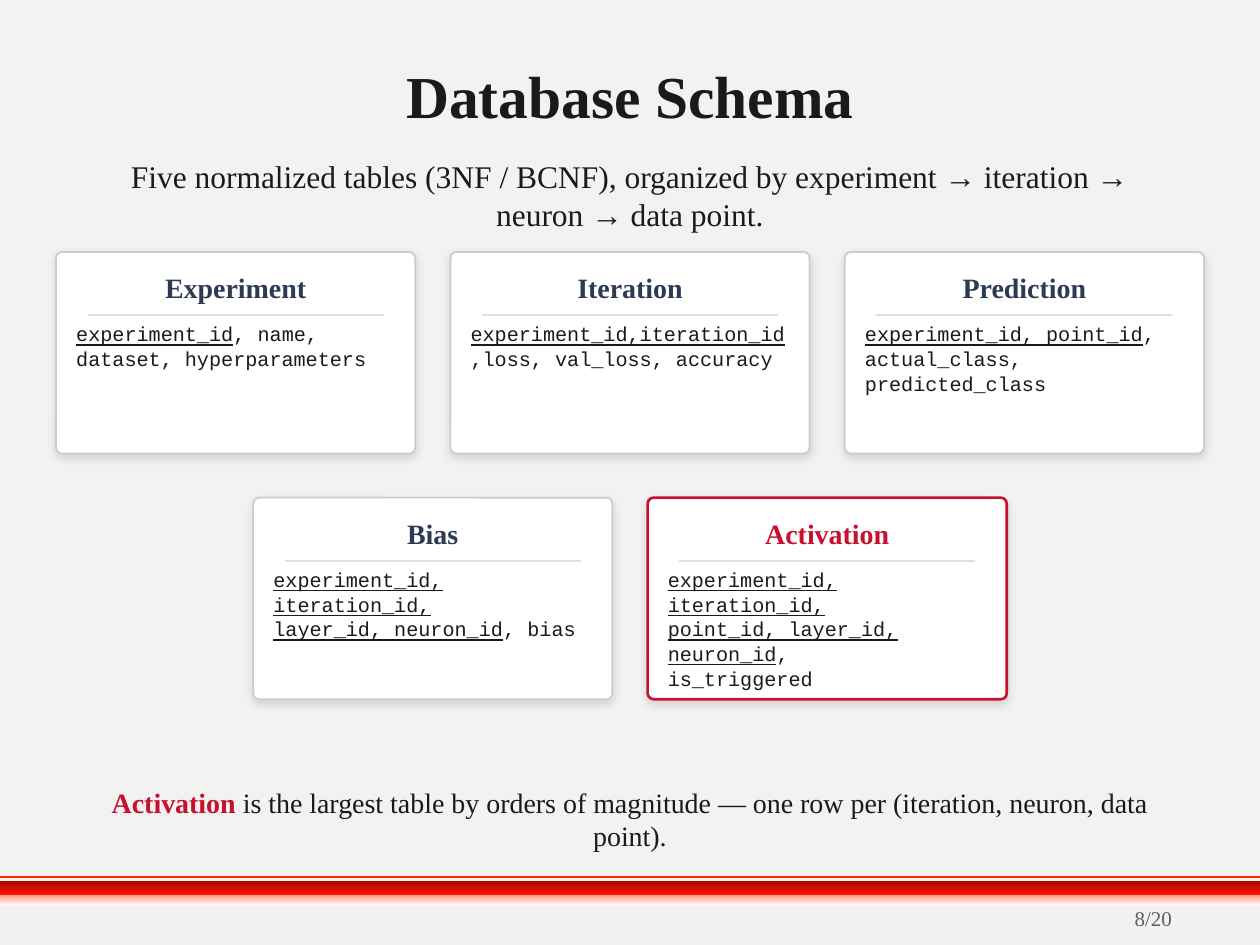
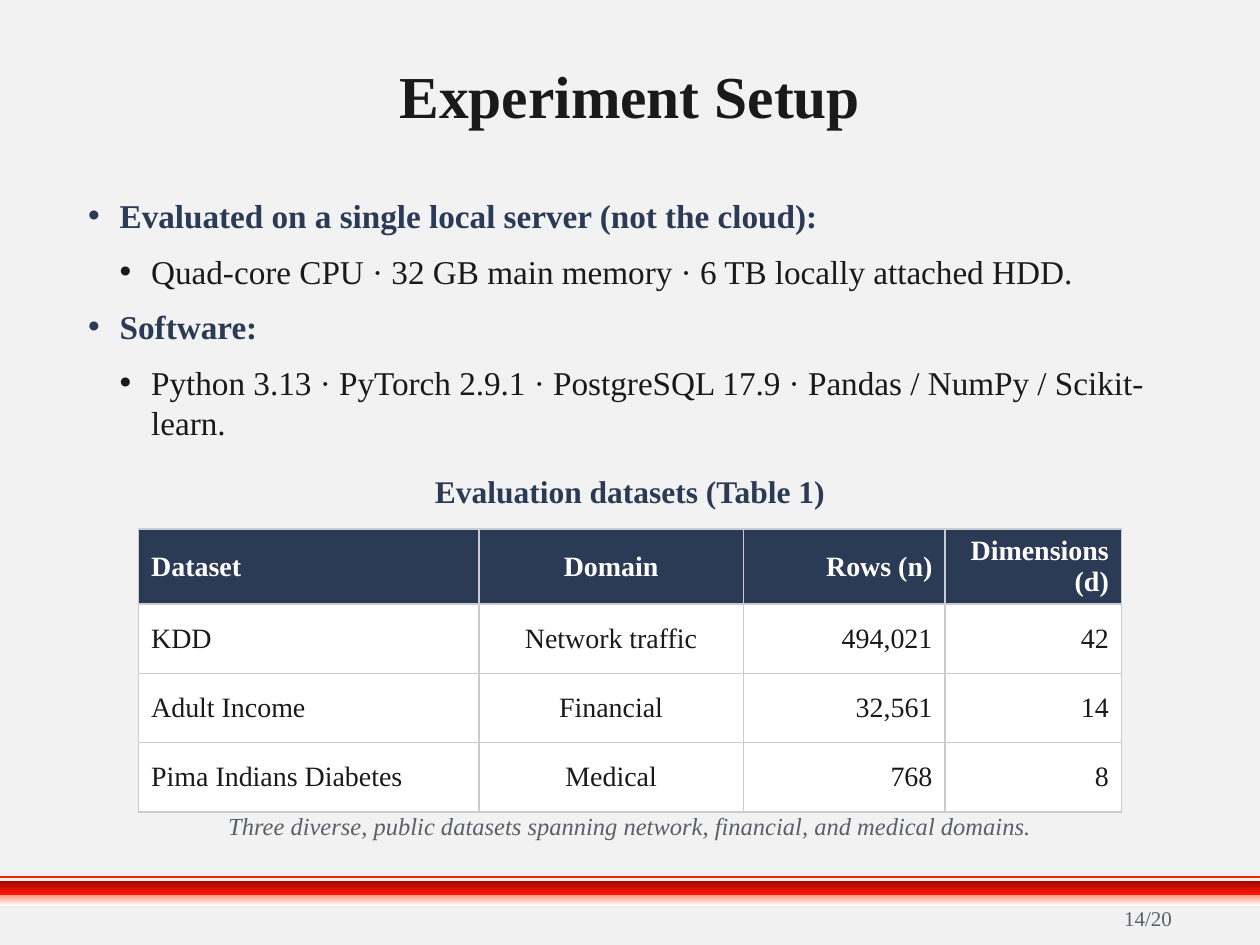
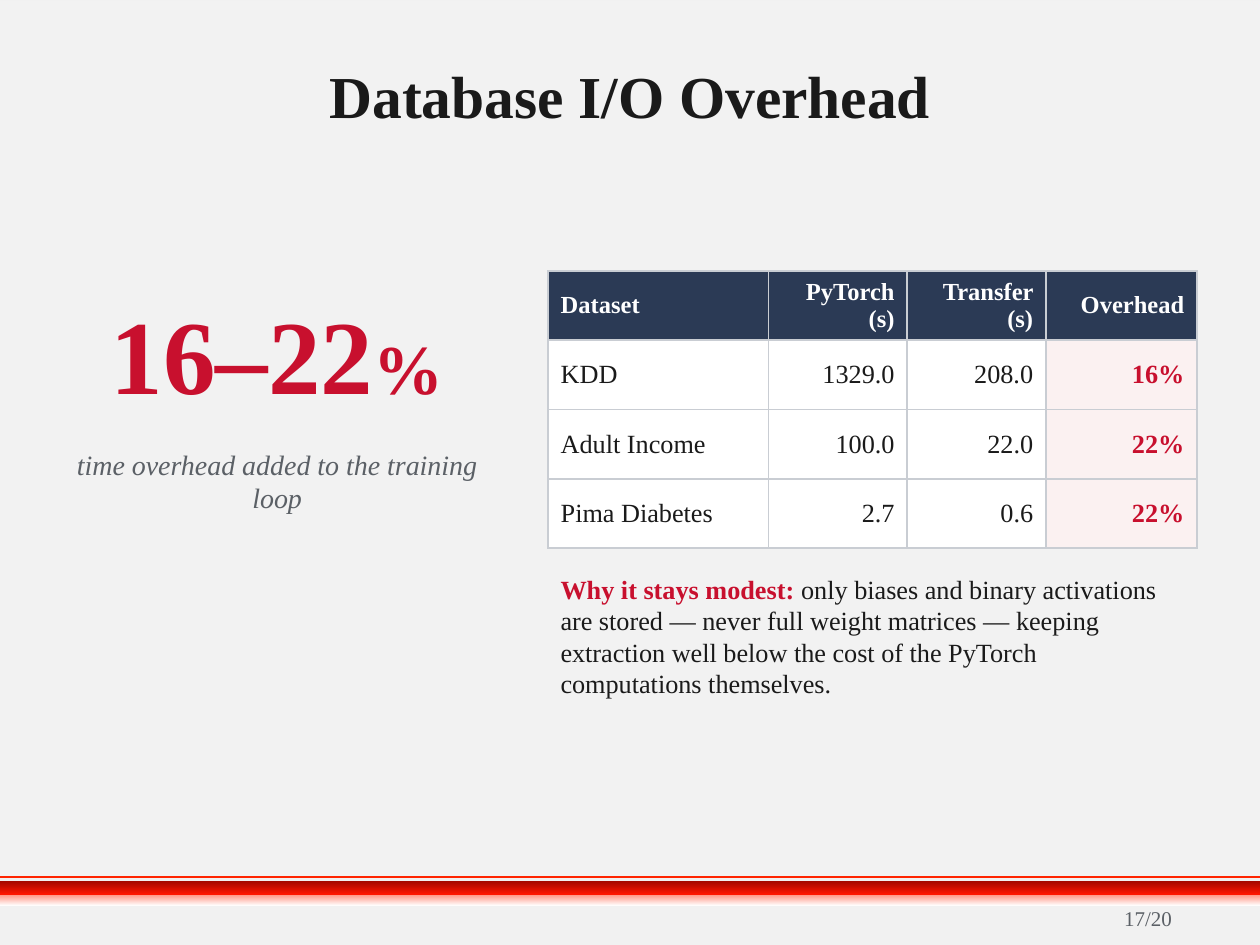
from lxml.etree import SubElement
from pptx import Presentation
from pptx.dml.color import RGBColor
from pptx.enum.shapes import MSO_CONNECTOR, MSO_SHAPE
from pptx.enum.text import MSO_ANCHOR as ANCHOR, MSO_AUTO_SIZE, PP_ALIGN as ALIGN
from pptx.oxml.ns import qn
from pptx.util import Inches, Pt

PAGE_WIDTH, PAGE_HEIGHT, PAGE_COUNT = 10, 7.5, 20
SERIF, MONO = "Times New Roman", "Courier New"
INK = RGBColor(0x1A, 0x1A, 0x1A)
NAVY = RGBColor(0x2B, 0x3A, 0x55)
CRIMSON = RGBColor(0xC8, 0x10, 0x2E)
SLATE = RGBColor(0x5B, 0x60, 0x66)
WHITE = RGBColor(0xFF, 0xFF, 0xFF)
BLUSH = RGBColor(0xFB, 0xF1, 0xF1)
GRID = RGBColor(0xC9, 0xCD, 0xD3)
RULE = RGBColor(0xDD, 0xE0, 0xE4)
PAPER = RGBColor(0xF1, 0xF1, 0xF1)
PANEL = RGBColor(0xF2, 0xF2, 0xF2)
SCARLET = RGBColor(0xFF, 0x24, 0x00)
DARK_RED = RGBColor(0xA0, 0x08, 0x00)
BRIGHT_RED = RGBColor(0xFF, 0x16, 0x00)

CARD_WIDTH, CARD_HEIGHT, CARD_GAP = 2.85, 1.6, 0.28
ROW_HEIGHT = 0.55

CARD_ROWS = [
    (2, [
        ("Experiment", [("experiment_id", ", name,"), ("", "dataset, hyperparameters")]),
        ("Iteration", [("experiment_id,iteration_id", ",loss, val_loss, accuracy")]),
        ("Prediction", [("experiment_id, point_id", ","),
                        ("", "actual_class, predicted_class")]),
    ]),
    (3.95, [
        ("Bias", [("experiment_id, iteration_id,", ""), ("layer_id, neuron_id", ", bias")]),
        ("Activation", [("experiment_id, iteration_id,", ""),
                        ("point_id, layer_id, neuron_id", ","), ("", "is_triggered")]),
    ]),
]
SETUP = [
    ("Evaluated on a single local server (not the cloud):",
     "Quad-core CPU · 32 GB main memory · 6 TB locally attached HDD."),
    ("Software:",
     "Python 3.13 · PyTorch 2.9.1 · PostgreSQL 17.9 · Pandas / NumPy / Scikit-learn."),
]
DATASETS = [
    ("Dataset", "Domain", "Rows (n)", "Dimensions (d)"),
    ("KDD", "Network traffic", "494,021", "42"),
    ("Adult Income", "Financial", "32,561", "14"),
    ("Pima Indians Diabetes", "Medical", "768", "8"),
]
OVERHEADS = [
    ("Dataset", "PyTorch (s)", "Transfer (s)", "Overhead"),
    ("KDD", "1329.0", "208.0", "16%"),
    ("Adult Income", "100.0", "22.0", "22%"),
    ("Pima Diabetes", "2.7", "0.6", "22%"),
]


def inches(*lengths):
    """Convert several lengths to Inches."""
    return [Inches(length) for length in lengths]


def write(frame, *paragraphs, align=ALIGN.LEFT, anchor=ANCHOR.MIDDLE, margin=None,
          line_spacing=None, **style):
    """Fill a text frame with paragraphs, each a string or a list of (text, style) runs."""
    frame.word_wrap = True
    frame.auto_size = MSO_AUTO_SIZE.NONE
    frame.vertical_anchor = anchor
    if margin is not None:
        frame.margin_left = frame.margin_right = Inches(margin)
        frame.margin_top = frame.margin_bottom = Inches(margin)
    for number, content in enumerate(paragraphs):
        paragraph = frame.paragraphs[0] if number == 0 else frame.add_paragraph()
        paragraph.alignment = align
        if line_spacing:
            paragraph.line_spacing = line_spacing
        runs = [(content, {})] if isinstance(content, str) else content
        for text, changes in runs:
            add_run(paragraph, text, **{**style, **changes})


def add_run(paragraph, text, size=16, color=INK, font=SERIF, bold=False, italic=False,
            underline=False):
    """Append one formatted run to a paragraph."""
    run = paragraph.add_run()
    run.text = text
    run.font.name = font
    run.font.size = Pt(size)
    run.font.color.rgb = color
    run.font.bold, run.font.italic, run.font.underline = bold, italic, underline


def add_text(slide, box, *paragraphs, **options):
    """Add a text box at the given box."""
    write(slide.shapes.add_textbox(*inches(*box)).text_frame, *paragraphs, **options)


def add_rule(slide, left, top, width, color, weight):
    """Draw a horizontal line without a shadow."""
    rule = slide.shapes.add_connector(
        MSO_CONNECTOR.STRAIGHT, *inches(left, top, left + width, top))
    rule.line.color.rgb = color
    rule.line.width = Pt(weight)
    SubElement(rule.element.spPr, qn("a:effectLst"))
    return rule


def add_band(slide, top, height, *colors):
    """Draw a full-width band in one colour or a vertical gradient."""
    band = slide.shapes.add_shape(MSO_SHAPE.RECTANGLE, *inches(0, top, PAGE_WIDTH, height))
    band.shadow.inherit = False
    band.line.fill.background()
    if len(colors) == 1:
        band.fill.solid()
        band.fill.fore_color.rgb = colors[0]
    else:
        band.fill.gradient()
        band.fill.gradient_angle = 270
        for stop, color in zip(band.fill.gradient_stops, colors):
            stop.color.rgb = color
    return band


def decorate_master(master, slide):
    """Give the master its background and footer bands, drawn first on a slide."""
    master.background.fill.solid()
    master.background.fill.fore_color.rgb = PAPER
    decorations = [
        add_band(slide, 0.01, 6.96, PANEL),
        add_band(slide, 7.01, 0.18, SCARLET, WHITE),
        add_rule(slide, 0, 6.96, PAGE_WIDTH, SCARLET, 0.75),
        add_band(slide, 6.99, 0.11, DARK_RED, BRIGHT_RED),
    ]
    for number, decoration in enumerate(decorations, start=20):
        decoration.element.xpath(".//p:cNvPr")[0].set("id", str(number))
        master.shapes.element.append(decoration.element)


def place(placeholder, box):
    """Move a placeholder to the given box."""
    (placeholder.left, placeholder.top,
     placeholder.width, placeholder.height) = inches(*box)


def add_page(deck, layout, heading, number):
    """Add a slide with its title and page number."""
    slide = deck.slides.add_slide(deck.slide_layouts.get_by_name(layout))
    place(slide.shapes.title, (0.4, 0.28, 9.2, 0.95))
    write(slide.shapes.title.text_frame, heading, align=ALIGN.CENTER, margin=0,
          size=34, bold=True)
    add_text(slide, (8.6, 7.14, 0.8, 0.3), f"{number}/{PAGE_COUNT}",
             align=ALIGN.RIGHT, size=12, color=SLATE)
    return slide


def add_card(slide, left, top, entity, fields, highlighted):
    """Draw one schema card with its name, divider and underlined key fields."""
    card = slide.shapes.add_shape(
        MSO_SHAPE.ROUNDED_RECTANGLE, *inches(left, top, CARD_WIDTH, CARD_HEIGHT))
    card.adjustments[0] = 0.03
    card.fill.solid()
    card.fill.fore_color.rgb = WHITE
    card.line.color.rgb = CRIMSON if highlighted else GRID
    card.line.width = Pt(1.5 if highlighted else 1)
    add_soft_shadow(card)
    add_text(slide, (left, top + 0.08, CARD_WIDTH, 0.4), entity, align=ALIGN.CENTER,
             margin=0, bold=True, color=CRIMSON if highlighted else NAVY)
    add_rule(slide, left + 0.25, top + 0.5, CARD_WIDTH - 0.5, RULE, 1)
    lines = [[(text, {"underline": is_key})
              for text, is_key in ((key, True), (rest, False)) if text]
             for key, rest in fields]
    add_text(slide, (left + 0.16, top + 0.55, CARD_WIDTH - 0.32, 0.98), *lines,
             anchor=ANCHOR.TOP, margin=0, line_spacing=1.02, size=11.5, font=MONO)


def add_soft_shadow(shape):
    """Replace the theme shadow by a faint one below the shape."""
    shape.shadow.inherit = False
    effects = shape.element.spPr.find(qn("a:effectLst"))
    shadow = SubElement(effects, qn("a:outerShdw"), blurRad=str(Pt(5)), dist=str(Pt(2)),
                        dir="5400000", algn="t", rotWithShape="0")
    black = SubElement(shadow, qn("a:srgbClr"), val="000000")
    SubElement(black, qn("a:alpha"), val="12000")


def add_borders(cell):
    """Give a table cell a thin line on all four sides."""
    properties = cell._tc.get_or_add_tcPr()
    for side in ("lnL", "lnR", "lnT", "lnB"):
        line = SubElement(properties, qn(f"a:{side}"), w=str(Pt(1)))
        fill = SubElement(line, qn("a:solidFill"))
        SubElement(fill, qn("a:srgbClr"), val=str(GRID))


def add_data_table(slide, left, top, widths, rows, aligns, header_size, body_size,
                   accent_column=None):
    """Add a bordered table with a dark header and an optional accented column."""
    table = slide.shapes.add_table(
        len(rows), len(widths),
        *inches(left, top, sum(widths), ROW_HEIGHT * len(rows))).table
    table.horz_banding = False
    for column, width in zip(table.columns, widths):
        column.width = Inches(width)
    for row, values in enumerate(rows):
        for column, (value, align) in enumerate(zip(values, aligns)):
            if row == 0:
                fill, style = NAVY, {"size": header_size, "color": WHITE, "bold": True}
            elif column == accent_column:
                fill, style = BLUSH, {"size": body_size, "color": CRIMSON, "bold": True}
            else:
                fill, style = WHITE, {"size": body_size}
            cell = table.cell(row, column)
            add_borders(cell)
            cell.fill.solid()
            cell.fill.fore_color.rgb = fill
            cell.vertical_anchor = ANCHOR.MIDDLE
            paragraph = cell.text_frame.paragraphs[0]
            paragraph.alignment = align
            add_run(paragraph, value, **style)


def add_setup_list(body, box):
    """Fill the body placeholder with bold topics and their details."""
    place(body, box)
    entries = [(level, text) for topic in SETUP for level, text in enumerate(topic)]
    write(body.text_frame,
          *[[(text, {"color": INK if level else NAVY, "bold": not level})]
            for level, text in entries],
          anchor=ANCHOR.TOP, size=19)
    for paragraph, (level, _) in zip(body.text_frame.paragraphs, entries):
        paragraph.level = level
        properties = paragraph._p.get_or_add_pPr()
        properties.set("marL", str(Inches(0.25 * (level + 1))))
        properties.set("indent", str(Inches(-0.25)))
        SubElement(properties, qn("a:buChar"), char="•")
        paragraph.space_before = Pt(0)
        paragraph.space_after = Pt(9)


def build_schema(slide):
    """Show the five tables as centred rows of cards."""
    add_text(slide, (0.6, 1.32, 8.8, 0.45),
             "Five normalized tables (3NF / BCNF), organized by experiment → iteration → "
             "neuron → data point.", align=ALIGN.CENTER, size=18)
    pitch = CARD_WIDTH + CARD_GAP
    for top, cards in CARD_ROWS:
        start = (PAGE_WIDTH - len(cards) * pitch + CARD_GAP) / 2
        for index, (entity, fields) in enumerate(cards):
            add_card(slide, start + index * pitch, top, entity, fields,
                     entity == "Activation")
    add_text(slide, (0.6, 6.25, 8.8, 0.5),
             [("Activation", {"color": CRIMSON, "bold": True}),
              (" is the largest table by orders of magnitude — one row per "
               "(iteration, neuron, data point).", {})], align=ALIGN.CENTER)


def build_setup(slide):
    """Show the hardware, the software and the evaluation datasets."""
    add_setup_list(slide.placeholders[1], (0.6, 1.5, 8.8, 2.2))
    add_text(slide, (0.6, 3.7, 8.8, 0.4), "Evaluation datasets (Table 1)",
             align=ALIGN.CENTER, size=18, color=NAVY, bold=True)
    add_data_table(slide, 1.1, 4.2, (2.7, 2.1, 1.6, 1.4), DATASETS,
                   (ALIGN.LEFT, ALIGN.CENTER, ALIGN.RIGHT, ALIGN.RIGHT), 16, 16)
    add_text(slide, (0.6, 6.35, 8.8, 0.4),
             "Three diverse, public datasets spanning network, financial, and medical "
             "domains.", align=ALIGN.CENTER, size=14, color=SLATE, italic=True)


def build_overhead(slide):
    """Show the headline overhead beside its table and explanation."""
    add_text(slide, (0.5, 2.1, 3.4, 1.4), [("16–22", {}), ("%", {"size": 40})],
             align=ALIGN.CENTER, margin=0, size=60, color=CRIMSON, bold=True)
    add_text(slide, (0.5, 3.5, 3.4, 0.9), "time overhead added to the training loop",
             align=ALIGN.CENTER, anchor=ANCHOR.TOP, color=SLATE, italic=True)
    add_data_table(slide, 4.35, 2.15, (1.75, 1.1, 1.1, 1.2), OVERHEADS,
                   (ALIGN.LEFT, ALIGN.RIGHT, ALIGN.RIGHT, ALIGN.RIGHT), 14, 15,
                   accent_column=3)
    add_text(slide, (4.35, 4.5, 5.15, 1.6),
             [("Why it stays modest: ", {"color": CRIMSON, "bold": True}),
              ("only biases and binary activations are stored — never full weight "
               "matrices — keeping extraction well below the cost of the PyTorch "
               "computations themselves.", {})], anchor=ANCHOR.TOP, size=15)


def main():
    """Build the three slides and save the deck."""
    deck = Presentation()
    deck.slide_width, deck.slide_height = inches(PAGE_WIDTH, PAGE_HEIGHT)
    schema = add_page(deck, "Title Only", "Database Schema", 8)
    decorate_master(deck.slide_master, schema)
    build_schema(schema)
    build_setup(add_page(deck, "Title and Content", "Experiment Setup", 14))
    build_overhead(add_page(deck, "Title Only", "Database I/O Overhead", 17))
    deck.save("out.pptx")


if __name__ == "__main__":
    main()
